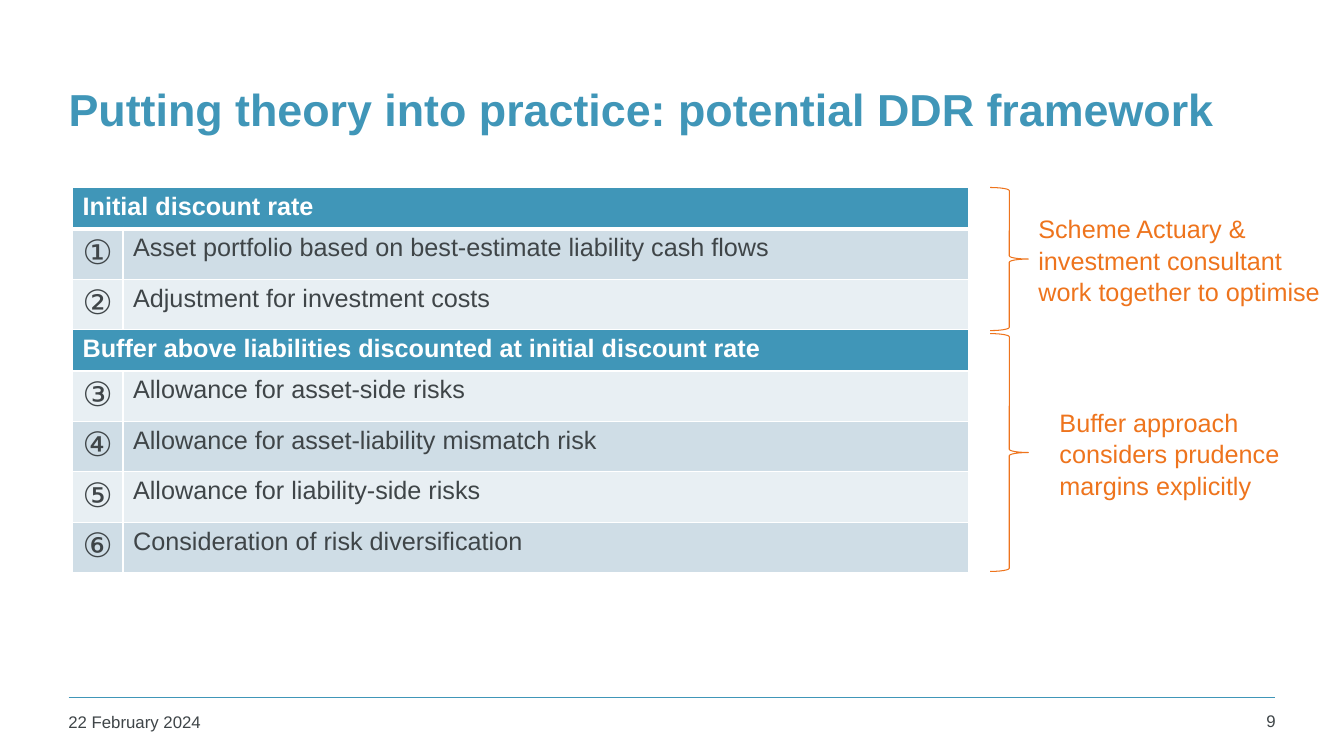
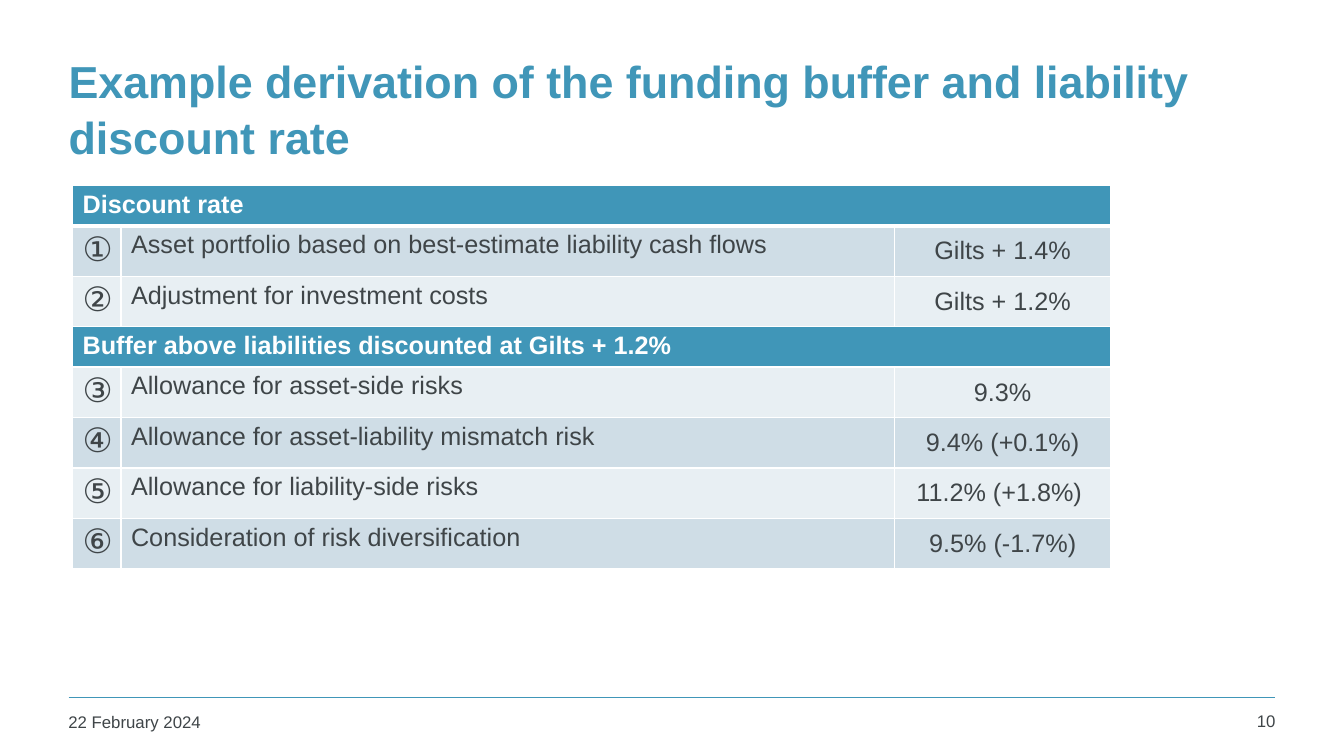
from lxml.etree import SubElement
from pptx import Presentation
from pptx.dml.color import RGBColor
from pptx.enum.shapes import MSO_CONNECTOR, MSO_SHAPE
from pptx.enum.text import MSO_ANCHOR, MSO_AUTO_SIZE, PP_ALIGN
from pptx.oxml.ns import qn
from pptx.util import Inches, Pt

COLOURS = {
    "blue": "4096B8",
    "text": "3F4548",
    "orange": "EE741D",
    "white": "FFFFFF",
    "band_dark": "CFDDE6",
    "band_light": "E8EFF3",
}
FONT = "Arial"
DATE = "22 February 2024"
TITLE_ONLY = 5

STEPS = [
    ("①", "Asset portfolio based on best-estimate liability cash flows"),
    ("②", "Adjustment for investment costs"),
    ("③", "Allowance for asset-side risks"),
    ("④", "Allowance for asset-liability mismatch risk"),
    ("⑤", "Allowance for liability-side risks"),
    ("⑥", "Consideration of risk diversification"),
]
RESULTS = ["Gilts + 1.4%", "Gilts + 1.2%", "9.3%", "9.4% (+0.1%)",
           "11.2% (+1.8%) ", "9.5% (-1.7%)"]


def colour(name):
    return RGBColor.from_string(COLOURS[name])


def write(frame, text, size, ink="text", bold=False, align=PP_ALIGN.LEFT, spacing=None):
    frame.text = text
    for para in frame.paragraphs:
        para.alignment = align
        para.line_spacing = spacing
        for span in para.runs:
            span.font.name = FONT
            span.font.size = Pt(size)
            span.font.bold = bold
            span.font.color.rgb = colour(ink)


def add_text(page, left, top, width, height, text, size, **style):
    box = page.shapes.add_textbox(Inches(left), Inches(top), Inches(width), Inches(height))
    box.text_frame.word_wrap = True
    write(box.text_frame, text, size, **style)
    return box


# Title, footer rule, date and page number
def add_page(deck, title, number):
    page = deck.slides.add_slide(deck.slide_layouts[TITLE_ONLY])
    heading = page.shapes.title
    heading.left, heading.top = Inches(0.58), Inches(0.44)
    heading.width, heading.height = Inches(12.09), Inches(1.25)
    heading.text_frame.auto_size = MSO_AUTO_SIZE.NONE
    heading.text_frame.vertical_anchor = MSO_ANCHOR.MIDDLE
    write(heading.text_frame, title, 32, ink="blue", bold=True, spacing=1.05)

    rule = page.shapes.add_connector(
        MSO_CONNECTOR.STRAIGHT, Inches(0.68), Inches(6.92), Inches(12.65), Inches(6.92))
    rule.line.color.rgb = colour("blue")
    rule.line.width = Pt(1)
    SubElement(rule._element.spPr, qn("a:effectLst"))

    add_text(page, 0.58, 7.01, 2.94, 0.36, DATE, 12)
    add_text(page, 11.81, 7, 0.94, 0.37, str(number), 12, align=PP_ALIGN.RIGHT)
    return page


# Framework table
def set_borders(cell, top=1, bottom=1):
    properties = cell._tc.get_or_add_tcPr()
    for side, points in (("L", 1), ("R", 1), ("T", top), ("B", bottom)):
        border = SubElement(properties, qn(f"a:ln{side}"), w=str(Pt(points)))
        fill = SubElement(border, qn("a:solidFill"))
        SubElement(fill, qn("a:srgbClr"), val=COLOURS["white"])


def paint(cell, fill):
    cell.fill.solid()
    cell.fill.fore_color.rgb = colour(fill)


def add_framework(page, top, columns, heights, headings, steps):
    """Headings stand above steps 1-2 and steps 3-6; heights are (heading, step)."""
    rows = [headings[:1], *steps[:2], headings[1:], *steps[2:]]
    row_heights = [heights[0] if len(row) == 1 else heights[1] for row in rows]
    table = page.shapes.add_table(
        len(rows), len(columns), Inches(0.72), Inches(top),
        Inches(sum(columns)), Inches(sum(row_heights))).table
    for column, width in zip(table.columns, columns):
        column.width = Inches(width)

    for index, (row, height) in enumerate(zip(rows, row_heights)):
        table.rows[index].height = Inches(height)
        cells = list(table.rows[index].cells)
        is_heading = len(row) == 1
        band = "band_dark" if index % 2 else "band_light"
        for cell in cells:
            set_borders(cell, top=3 if index == 1 else 1, bottom=3 if index == 0 else 1)
            paint(cell, "blue" if is_heading else band)
        if is_heading:
            cells[0].merge(cells[-1])
            write(cells[0].text_frame, row[0], 18, ink="white", bold=True)
            continue
        write(cells[0].text_frame, row[0], 24)
        write(cells[1].text_frame, row[1], 18)
        for cell, value in zip(cells[2:], row[2:]):
            cell.vertical_anchor = MSO_ANCHOR.MIDDLE
            write(cell.text_frame, value, 18, align=PP_ALIGN.CENTER)


# Brace with its remark
def add_brace(page, top, height):
    brace = page.shapes.add_shape(
        MSO_SHAPE.RIGHT_BRACE, Inches(9.82), Inches(top), Inches(0.38), Inches(height))
    brace.shadow.inherit = False
    brace.fill.background()
    brace.line.color.rgb = colour("orange")
    brace.line.width = Pt(0.75)


def add_remark(page, left, top, width, text):
    box = add_text(page, left, top, width, 1.01, text, 18, ink="orange", spacing=1.04)
    box.text_frame.auto_size = MSO_AUTO_SIZE.SHAPE_TO_FIT_TEXT


def main():
    deck = Presentation()
    deck.slide_width, deck.slide_height = Inches(13.33), Inches(7.5)

    # Framework
    page = add_page(deck, "Putting theory into practice: potential DDR framework", 9)
    add_framework(
        page, 1.86, [0.5, 8.39], (0.41, 0.47),
        ["Initial discount rate",
         "Buffer above liabilities discounted at initial discount rate"], STEPS)
    add_brace(page, 1.86, 1.42)
    add_remark(page, 10.2, 2.06, 3.05,
               "Scheme Actuary & investment consultant work together to optimise")
    add_brace(page, 3.31, 2.36)
    add_remark(page, 10.41, 3.98, 2.7,
               "Buffer approach considers prudence margins explicitly")

    # Worked example
    page = add_page(
        deck, "Example derivation of the funding buffer and liability discount rate", 10)
    add_framework(
        page, 1.84, [0.48, 7.67, 2.15], (0.39, 0.48),
        ["Discount rate", "Buffer above liabilities discounted at Gilts + 1.2%"],
        [(*step, result) for step, result in zip(STEPS, RESULTS)])

    deck.save("out.pptx")


if __name__ == "__main__":
    main()
